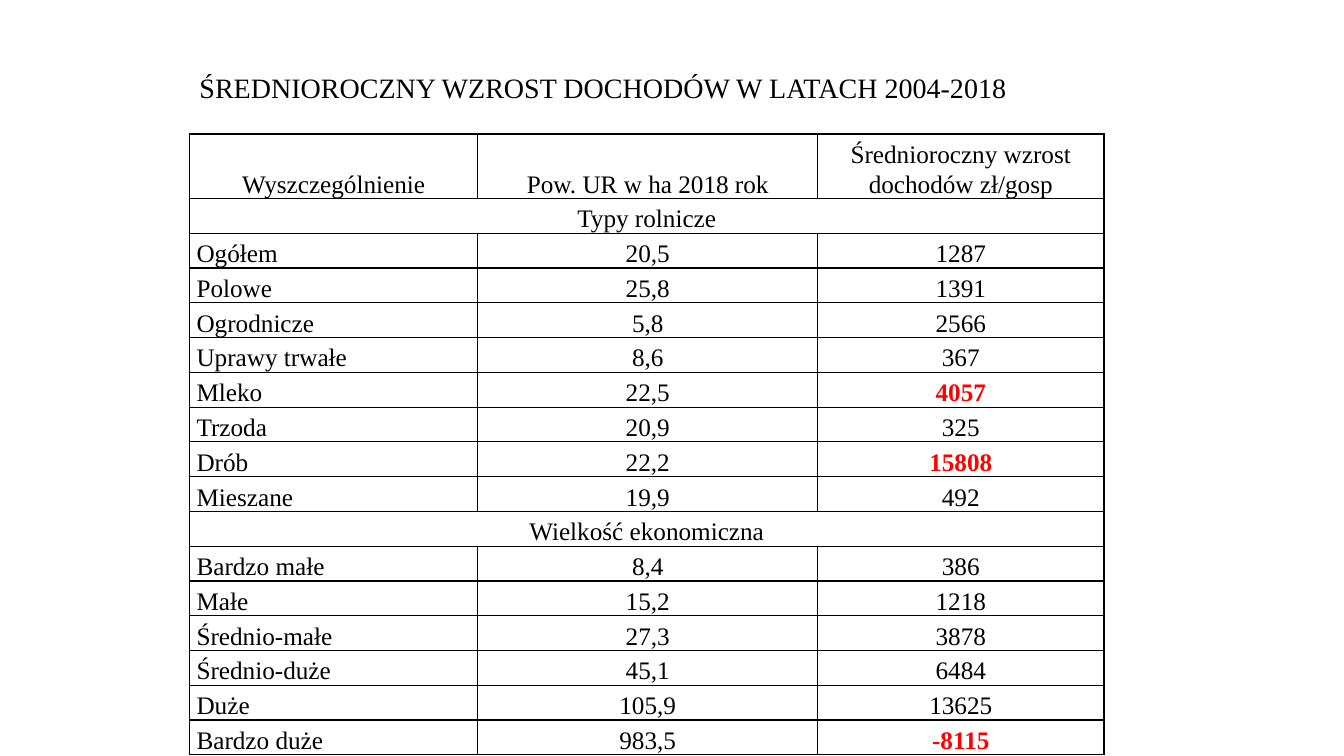
import dataclasses

import lxml.etree
import pptx
import pptx.dml.color
import pptx.enum.text
import pptx.oxml.ns
import pptx.util

Inches = pptx.util.Inches
Pt = pptx.util.Pt
Align = pptx.enum.text.PP_ALIGN


@dataclasses.dataclass(frozen=True)
class Theme:
    font: str = "Times New Roman"
    text: str = "000000"
    highlight: str = "FF0000"
    border: str = "000000"
    title_size: int = 20
    table_size: int = 18
    border_width: int = 1


HEADER = (
    "Wyszczególnienie",
    "Pow. UR w ha 2018 rok",
    "Średnioroczny wzrost dochodów zł/gosp",
)
SECTIONS = {
    "Typy rolnicze": (
        ("Ogółem", "20,5", "1287"),
        ("Polowe", "25,8", "1391"),
        ("Ogrodnicze", "5,8", "2566"),
        ("Uprawy trwałe", "8,6", "367"),
        ("Mleko", "22,5", "4057"),
        ("Trzoda", "20,9", "325"),
        ("Drób", "22,2", "15808"),
        ("Mieszane", "19,9", "492"),
    ),
    "Wielkość ekonomiczna": (
        ("Bardzo małe", "8,4", "386"),
        ("Małe", "15,2", "1218"),
        ("Średnio-małe", "27,3", "3878"),
        ("Średnio-duże", "45,1", "6484"),
        ("Duże", "105,9", "13625"),
        ("Bardzo duże", "983,5", "-8115"),
    ),
}
HIGHLIGHTED = {"4057", "15808", "-8115"}
COLUMN_WIDTHS = (2.86, 3.37, 2.84)
LEFT, TABLE_TOP, WIDTH, TABLE_HEIGHT = 1.88, 1.33, 9.07, 6.16
HEADER_HEIGHT = 0.64


class SlideBuilder:
    def __init__(self, slide, theme):
        self.slide = slide
        self.theme = theme

    def format_run(self, run, size, color, bold=False):
        run.font.name = self.theme.font
        run.font.size = Pt(size)
        run.font.bold = bold
        run.font.color.rgb = pptx.dml.color.RGBColor.from_string(color)

    def title(self, text, left, top, width, height):
        shape = self.slide.shapes.add_textbox(
            Inches(left), Inches(top), Inches(width), Inches(height)
        )
        frame = shape.text_frame
        frame.word_wrap = True
        frame.auto_size = pptx.enum.text.MSO_AUTO_SIZE.SHAPE_TO_FIT_TEXT
        frame.text = text
        self.format_run(
            frame.paragraphs[0].runs[0], self.theme.title_size, self.theme.text
        )

    def cell_box(self, cell):
        cell.margin_left = cell.margin_right = Inches(0.07)
        cell.margin_top = cell.margin_bottom = 0
        cell.vertical_anchor = pptx.enum.text.MSO_ANCHOR.BOTTOM
        qn = pptx.oxml.ns.qn
        properties = cell._tc.get_or_add_tcPr()
        for side in ("a:lnL", "a:lnR", "a:lnT", "a:lnB"):
            line = lxml.etree.SubElement(
                properties, qn(side), w=str(Pt(self.theme.border_width))
            )
            fill = lxml.etree.SubElement(line, qn("a:solidFill"))
            lxml.etree.SubElement(fill, qn("a:srgbClr"), val=self.theme.border)
        cell.fill.background()

    def cell_text(self, cell, text, alignment, line_spacing):
        cell.text_frame.text = text
        paragraph = cell.text_frame.paragraphs[0]
        paragraph.alignment = alignment
        paragraph.line_spacing = line_spacing
        paragraph.space_after = Pt(8)
        bold = text in HIGHLIGHTED
        color = self.theme.highlight if bold else self.theme.text
        self.format_run(paragraph.runs[0], self.theme.table_size, color, bold)

    def table(self, header, sections, left, top, width, height):
        rows = [header]
        for section, records in sections.items():
            rows += [(section,), *records]
        table = self.slide.shapes.add_table(
            len(rows), len(header),
            Inches(left), Inches(top), Inches(width), Inches(height),
        ).table
        table.first_row = table.horz_banding = False
        for column, column_width in zip(table.columns, COLUMN_WIDTHS):
            column.width = Inches(column_width)
        row_height = (height - HEADER_HEIGHT) / (len(rows) - 1)
        for row_index, values in enumerate(rows):
            is_header = row_index == 0
            is_section = len(values) == 1
            row = table.rows[row_index]
            row.height = Inches(HEADER_HEIGHT if is_header else row_height)
            for cell in row.cells:
                self.cell_box(cell)
            if is_section:
                row.cells[0].merge(row.cells[len(header) - 1])
            for column_index, text in enumerate(values):
                is_label = column_index == 0 and not (is_header or is_section)
                self.cell_text(
                    row.cells[column_index],
                    text,
                    Align.LEFT if is_label else Align.CENTER,
                    1.07 if is_header else 1.15,
                )


def main():
    presentation = pptx.Presentation()
    presentation.slide_width = Inches(13.33)
    presentation.slide_height = Inches(7.5)
    slide = presentation.slides.add_slide(presentation.slide_layouts[6])
    builder = SlideBuilder(slide, Theme())
    builder.table(HEADER, SECTIONS, LEFT, TABLE_TOP, WIDTH, TABLE_HEIGHT)
    builder.title(
        "ŚREDNIOROCZNY WZROST DOCHODÓW W LATACH 2004-2018", LEFT, 0.65, WIDTH, 0.44
    )
    presentation.save("out.pptx")


if __name__ == "__main__":
    main()
